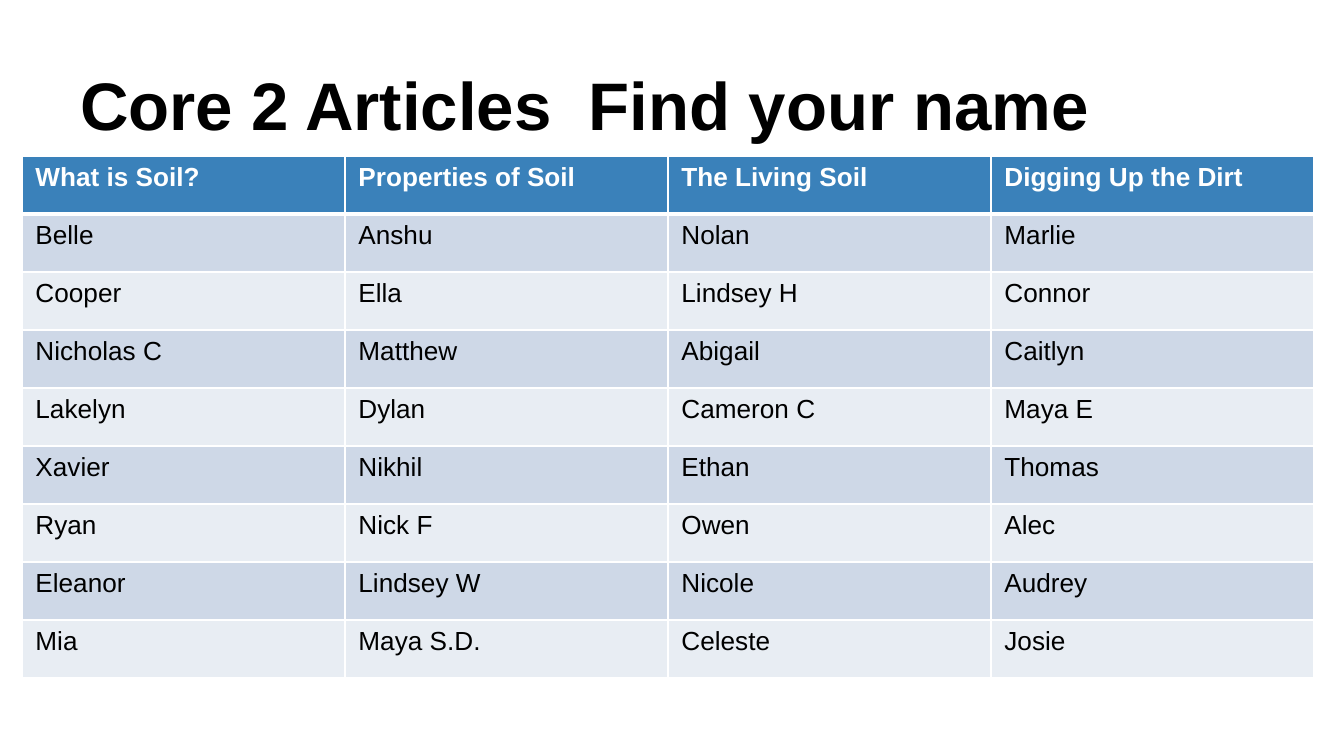
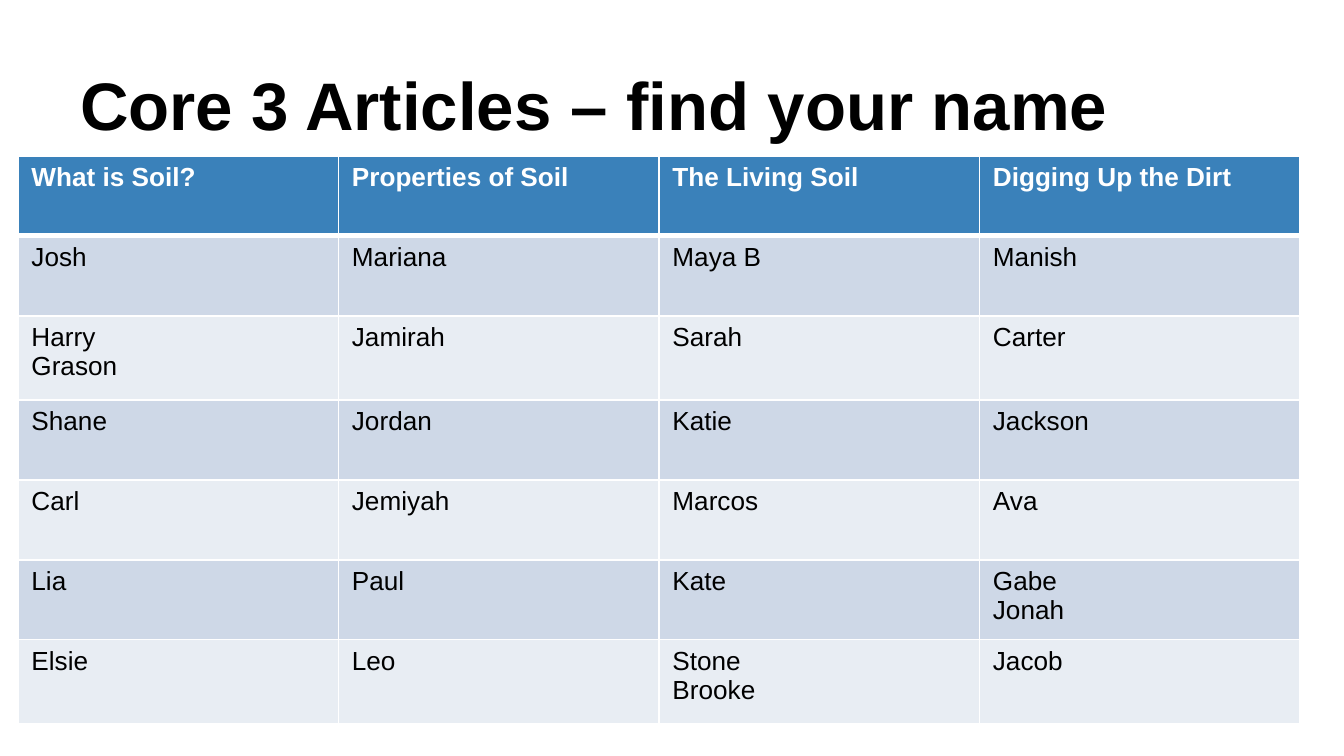
from lxml import etree
from pptx import Presentation
from pptx.dml.color import RGBColor
from pptx.enum.text import MSO_ANCHOR, MSO_AUTO_SIZE, PP_ALIGN
from pptx.oxml.ns import qn
from pptx.util import Pt

LEFT = PP_ALIGN.LEFT
BOTTOM = MSO_ANCHOR.BOTTOM
NO_FIT = MSO_AUTO_SIZE.NONE

HEADS = ["What is Soil?", "Properties of Soil", "The Living Soil", "Digging Up the Dirt"]
SLIDES = [
    {
        "title": "Core 2 Articles  Find your name",
        "left": 22,
        "width": 1292,
        "heights": [58] * 9,
        "names": [
            ["Belle", "Anshu", "Nolan", "Marlie"],
            ["Cooper", "Ella", "Lindsey H", "Connor"],
            ["Nicholas C", "Matthew", "Abigail", "Caitlyn"],
            ["Lakelyn", "Dylan", "Cameron C", "Maya E"],
            ["Xavier", "Nikhil", "Ethan", "Thomas"],
            ["Ryan", "Nick F", "Owen", "Alec"],
            ["Eleanor", "Lindsey W", "Nicole", "Audrey"],
            ["Mia", "Maya S.D.", "Celeste", "Josie"],
        ],
    },
    {
        "title": "Core 3 Articles – find your name",
        "left": 18,
        "width": 1282,
        "heights": [80, 80, 84, 80, 80, 80, 84],
        "names": [
            ["Josh", "Mariana", "Maya B", "Manish"],
            ["Harry\nGrason", "Jamirah", "Sarah", "Carter"],
            ["Shane", "Jordan", "Katie", "Jackson"],
            ["Carl", "Jemiyah", "Marcos", "Ava"],
            ["Lia", "Paul", "Kate", "Gabe\nJonah"],
            ["Elsie", "Leo", "Stone\nBrooke", "Jacob"],
        ],
    },
]

COLORS = {"head": "3A81BA", "odd": "CED8E7", "even": "E8EDF3", "text": "000000", "white": "FFFFFF"}
FONT = "Arial"
WIDTH, HEIGHT = 1344, 756
TITLE = (67, 31, 1210, 126)
INSET = 13
TOP = 156


def px(num):
    return round(num * 914400 / 134.4)


def color(key):
    return RGBColor.from_string(COLORS[key])


def style(frame, size, key, bold):
    for para in frame.paragraphs:
        para.alignment = LEFT
        for run in para.runs:
            font = run.font
            font.name, font.size, font.bold = FONT, Pt(size), bold
            font.color.rgb = color(key)


def border(cell, row):
    props = cell._tc.get_or_add_tcPr()
    wide = {"T": 3 if row == 1 else 1, "B": 3 if row == 0 else 1}
    for side in "LRTB":
        line = etree.SubElement(props, qn(f"a:ln{side}"), w=str(Pt(wide.get(side, 1))))
        fill = etree.SubElement(line, qn("a:solidFill"))
        etree.SubElement(fill, qn("a:srgbClr"), val=COLORS["white"])


def add_title(slide, text):
    title = slide.shapes.title
    title.left, title.top, title.width, title.height = map(px, TITLE)
    frame = title.text_frame
    frame.text = text
    frame.word_wrap = True
    frame.auto_size = NO_FIT
    frame.vertical_anchor = BOTTOM
    frame.margin_left = frame.margin_right = px(INSET)
    frame.margin_top = frame.margin_bottom = px(INSET)
    style(frame, 36, "text", True)


def add_names(slide, page):
    rows = [HEADS] + page["names"]
    sizes = page["heights"]
    box = map(px, (page["left"], TOP, page["width"], sum(sizes)))
    table = slide.shapes.add_table(len(rows), len(HEADS), *box).table
    table.horz_banding = False
    for col in table.columns:
        col.width = px(page["width"] / len(HEADS))
    for r, names in enumerate(rows):
        table.rows[r].height = px(sizes[r])
        band = "head" if r == 0 else "odd" if r % 2 else "even"
        for c, name in enumerate(names):
            cell = table.cell(r, c)
            border(cell, r)
            cell.fill.solid()
            cell.fill.fore_color.rgb = color(band)
            cell.text_frame.text = name
            style(cell.text_frame, 14, "text" if r else "white", r == 0)


def main():
    deck = Presentation()
    deck.slide_width, deck.slide_height = px(WIDTH), px(HEIGHT)
    for page in SLIDES:
        slide = deck.slides.add_slide(deck.slide_layouts[5])
        add_title(slide, page["title"])
        add_names(slide, page)
    deck.save("out.pptx")


if __name__ == "__main__":
    main()
